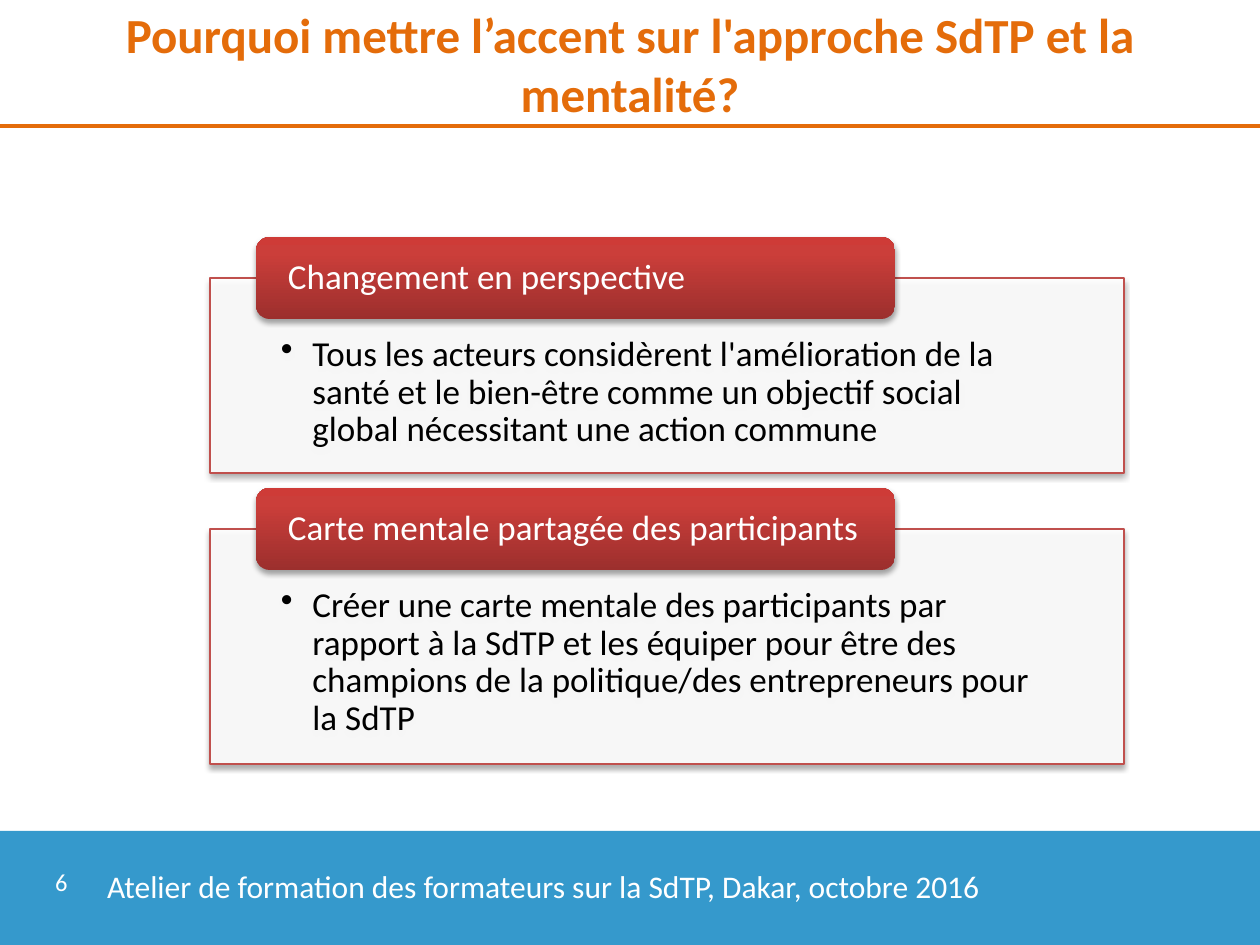
from copy import deepcopy

from lxml import etree
from pptx import Presentation
from pptx.dml.color import RGBColor
from pptx.enum.shapes import MSO_CONNECTOR, MSO_SHAPE
from pptx.enum.text import MSO_ANCHOR, MSO_AUTO_SIZE, PP_ALIGN
from pptx.oxml.ns import qn
from pptx.util import Emu, Pt

RECTANGLE = MSO_SHAPE.RECTANGLE
ROUNDED = MSO_SHAPE.ROUNDED_RECTANGLE
STRAIGHT = MSO_CONNECTOR.STRAIGHT
TOP, MIDDLE = MSO_ANCHOR.TOP, MSO_ANCHOR.MIDDLE
LEFT, CENTER = PP_ALIGN.LEFT, PP_ALIGN.CENTER

ORANGE, BLUE, RED, WHITE, BLACK = "E46C0A", "3599CC", "C0504D", "FFFFFF", "000000"
HEADER_STOPS = [(0, "9C2F2D"), (0.8, "CB3E3A"), (1, "CE3B37")]
SECTIONS = [
    (278, 195, "Changement en perspective",
     "Tous les acteurs considèrent l'amélioration de la santé et le bien-être "
     "comme un objectif social global nécessitant une action commune"),
    (529, 235, "Carte mentale partagée des participants",
     "Créer une carte mentale des participants par rapport à la SdTP et les équiper "
     "pour être des champions de la politique/des entrepreneurs pour la SdTP"),
]


def px(*lengths):
    return [Emu(length * 914400 // 126) for length in lengths]


def write(shape, text, size, color, margins=(13, 6, 13, 6), anchor=TOP, align=LEFT):
    frame = shape.text_frame
    frame.word_wrap = True
    frame.auto_size = MSO_AUTO_SIZE.NONE
    frame.vertical_anchor = anchor
    (frame.margin_left, frame.margin_top,
     frame.margin_right, frame.margin_bottom) = px(*margins)
    paragraph = frame.paragraphs[0]
    paragraph.text = text
    paragraph.alignment = align
    paragraph.font.name = "Calibri"
    paragraph.font.size = Pt(size)
    paragraph.font.color.rgb = RGBColor.from_string(color)
    return paragraph


presentation = Presentation()
presentation.slide_width, presentation.slide_height = px(1260, 945)
slide = presentation.slides.add_slide(presentation.slide_layouts[5])
shapes = slide.shapes

title = shapes.title
title.left, title.top, title.width, title.height = px(0, 0, 1260, 126)
paragraph = write(title, "Pourquoi mettre l’accent sur l'approche SdTP et la mentalité?",
                  28, ORANGE, anchor=MIDDLE, align=CENTER)
paragraph.font.bold = True

footer = shapes.add_shape(RECTANGLE, *px(0, 831, 1260, 114))
footer.shadow.inherit = False
footer.fill.solid()
footer.fill.fore_color.rgb = RGBColor.from_string(BLUE)
footer.line.fill.background()

rule = shapes.add_connector(STRAIGHT, *px(0, 126, 1260, 126))
rule.line.color.rgb = RGBColor.from_string(ORANGE)
rule.line.width = Pt(2.25)
etree.SubElement(rule._element.spPr, qn("a:effectLst"))

for top, height, heading, text in SECTIONS:
    box = shapes.add_shape(RECTANGLE, *px(210, top, 914, height))
    box.fill.solid()
    box.fill.fore_color.rgb = RGBColor.from_string(WHITE)
    box_color = box._element.spPr.find(qn("a:solidFill"))[0]
    etree.SubElement(box_color, qn("a:alpha"), val="90000")
    box.line.color.rgb = RGBColor.from_string(RED)
    box.line.width = Pt(0.75)
    paragraph = write(box, text, 20, BLACK, margins=(71, 58, 71, 20))
    paragraph.line_spacing = 0.9
    properties = paragraph._p.get_or_add_pPr()
    properties.set("marL", "228600")
    properties.set("indent", "-228600")
    bullet = etree.Element(qn("a:buChar"), char="•")
    properties.find(qn("a:lnSpc")).addnext(bullet)

    header = shapes.add_shape(ROUNDED, *px(256, top - 41, 639, 82))
    header.fill.gradient()
    header.fill.gradient_angle = 90
    stop_list = header._element.spPr.find(qn("a:gradFill")).find(qn("a:gsLst"))
    stop_list.append(deepcopy(stop_list[-1]))
    for stop, (position, color) in zip(header.fill.gradient_stops, HEADER_STOPS):
        stop.position = position
        stop.color.rgb = RGBColor.from_string(color)
    header.line.fill.background()
    paragraph = write(header, heading, 20, WHITE, margins=(28, 4, 28, 4), anchor=MIDDLE)
    paragraph.line_spacing = 0.9

    for shape in (box, header):
        shape.shadow.inherit = False
        effects = shape._element.spPr.find(qn("a:effectLst"))
        shadow = etree.SubElement(effects, qn("a:outerShdw"), blurRad=str(Pt(3.1)),
                                  dist=str(Pt(1.8)), dir="5400000", rotWithShape="0")
        shadow_color = etree.SubElement(shadow, qn("a:srgbClr"), val=BLACK)
        etree.SubElement(shadow_color, qn("a:alpha"), val="35000")

slide_number = shapes.add_textbox(*px(42, 861, 105, 60))
write(slide_number, "6", 14, WHITE)

event = shapes.add_textbox(*px(94, 861, 924, 50))
write(event, "Atelier de formation des formateurs sur la SdTP, Dakar, octobre 2016", 18, WHITE)

presentation.save("out.pptx")
